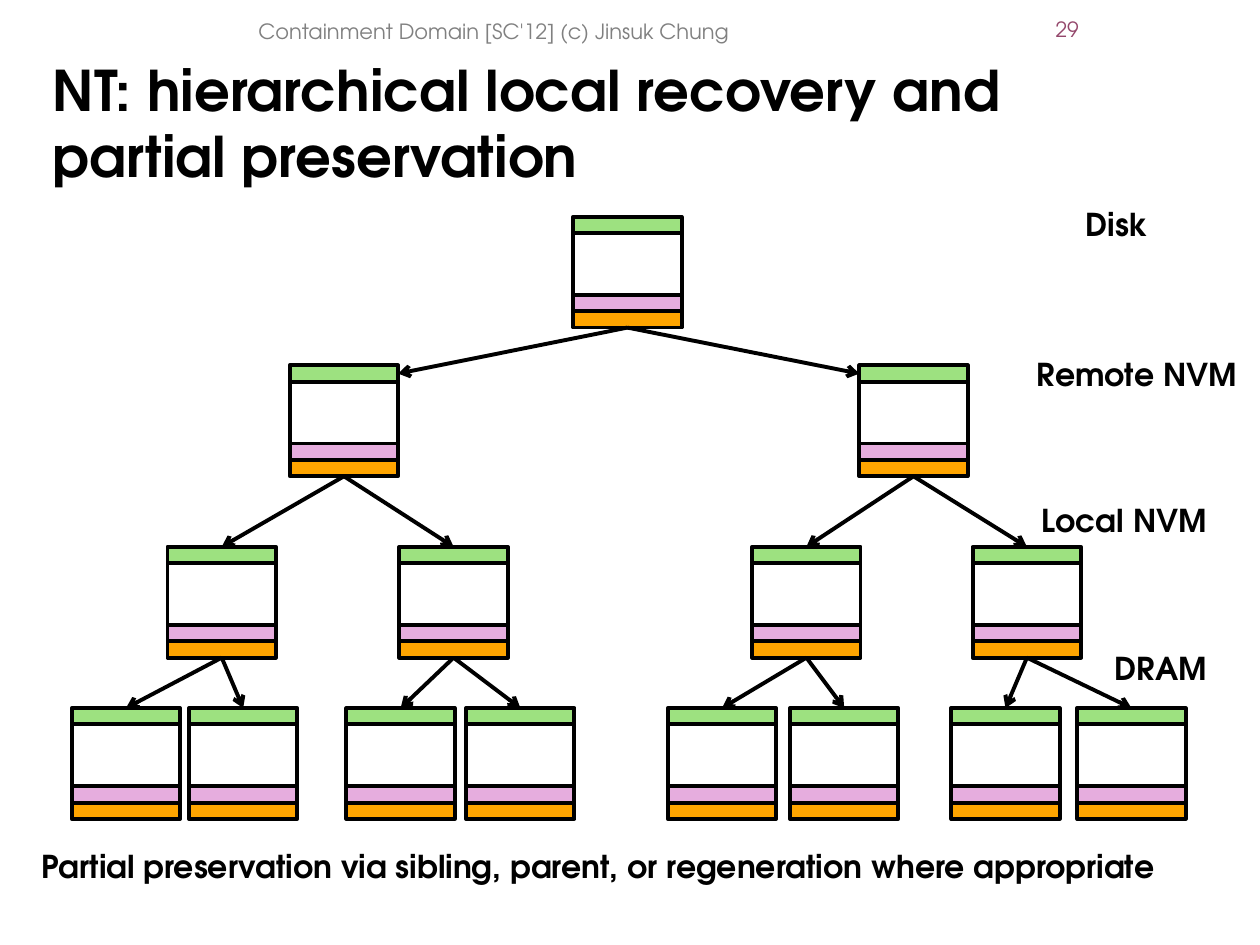
from typing import NamedTuple

from lxml import etree
from pptx import Presentation
from pptx import util as u
from pptx.dml.color import RGBColor
from pptx.enum import shapes, text
from pptx.oxml.ns import qn

FONT = "TeX Gyre Adventor"
HUES = {"ink": "000000", "green": "9DE180", "pink": "E6ADDE",
        "orange": "FFA500", "grey": "808080", "plum": "94476B"}
WIDE, BODY, BAND = 0.86, 0.49, 0.13
TOP, LEFT, BOTTOM, RIGHT = range(4)


class Level(NamedTuple):
    top: float
    lefts: list[float]


class Label(NamedTuple):
    words: str
    left: float
    top: float
    wide: float


class Node(NamedTuple):
    head: object
    foot: object


LEVELS = [
    Level(1.72, [4.55]),
    Level(2.9, [2.3, 6.82]),
    Level(4.34, [1.33, 3.17, 5.97, 7.72]),
    Level(5.62, [0.57, 1.5, 2.75, 3.7, 5.3, 6.27, 7.55, 8.55]),
]
LABELS = [
    Label("Disk", 8.52, 1.58, 0.83),
    Label("Remote NVM", 8.13, 2.77, 1.99),
    Label("Local NVM", 8.17, 3.93, 1.99),
    Label("DRAM", 8.75, 5.1, 1.41),
    Label("Partial preservation via sibling, parent, or regeneration"
          " where appropriate", 0.23, 6.67, 9.22),
]


def color(name: str) -> RGBColor:
    return RGBColor.from_string(HUES[name])


def write(slide, words: str, left: float, top: float, wide: float, high: float,
          *, size: float = 18, hue: str = "ink", bold: bool = False,
          align=text.PP_ALIGN.LEFT, anchor=text.MSO_ANCHOR.TOP,
          inset: tuple = (0.1, 0.05), space: float = 1.0, grow: bool = False):
    box = slide.shapes.add_textbox(*map(u.Inches, (left, top, wide, high)))
    frame = box.text_frame
    frame.word_wrap = True
    frame.vertical_anchor = anchor
    frame.margin_left = frame.margin_right = u.Inches(inset[0])
    frame.margin_top = frame.margin_bottom = u.Inches(inset[1])
    if grow:
        frame.auto_size = text.MSO_AUTO_SIZE.SHAPE_TO_FIT_TEXT
    para = frame.paragraphs[0]
    para.text = words
    para.alignment = align
    para.line_spacing = space
    for run in para.runs:
        run.font.name = FONT
        run.font.size = u.Pt(size)
        run.font.bold = bold
        run.font.color.rgb = color(hue)


def bar(group, left: float, top: float, high: float, hue: str | None = None):
    rect = group.shapes.add_shape(shapes.MSO_SHAPE.RECTANGLE,
                                  *map(u.Inches, (left, top, WIDE, high)))
    rect.shadow.inherit = False
    if hue:
        rect.fill.solid()
        rect.fill.fore_color.rgb = color(hue)
    else:
        rect.fill.background()
    rect.line.color.rgb = color("ink")
    rect.line.width = u.Pt(2.25)
    return rect


def domain(slide, left: float, top: float) -> Node:
    """Draw one containment domain: an open body between coloured bands."""
    group = slide.shapes.add_group_shape()
    base = top + BAND + BODY
    bar(group, left, top + BAND, BODY)
    head = bar(group, left, top, BAND, "green")
    bar(group, left, base, BAND, "pink")
    foot = bar(group, left, base + BAND, BAND, "orange")
    return Node(head, foot)


def arrow(slide, start: Node, end: Node, side: int):
    line = slide.shapes.add_connector(shapes.MSO_CONNECTOR.STRAIGHT, 0, 0, 0, 0)
    line.begin_connect(start.foot, BOTTOM)
    line.end_connect(end.head, side)
    line.line.color.rgb = color("ink")
    line.line.width = u.Pt(2.25)
    etree.SubElement(line.line._get_or_add_ln(), qn("a:tailEnd"), type="arrow")
    etree.SubElement(line._element.spPr, qn("a:effectLst"))


def main():
    deck = Presentation()
    deck.slide_width, deck.slide_height = u.Inches(10), u.Inches(7.5)
    slide = deck.slides.add_slide(deck.slide_layouts[6])
    mid = text.MSO_ANCHOR.MIDDLE

    write(slide, "NT: hierarchical local recovery and\vpartial preservation",
          0.42, 0.5, 9.41, 0.98, size=32, bold=True, anchor=mid,
          inset=(0, 0), space=0.99)
    write(slide, "29", 7.75, -0.02, 0.91, 0.5, size=12, hue="plum",
          align=text.PP_ALIGN.RIGHT, anchor=mid)
    write(slide, "Containment Domain [SC'12] (c) Jinsuk Chung",
          0.92, 0, 6, 0.5, size=12, hue="grey",
          align=text.PP_ALIGN.CENTER, anchor=mid)

    tree = [[domain(slide, left, level.top) for left in level.lefts]
            for level in LEVELS]
    for depth, (above, below) in enumerate(zip(tree, tree[1:])):
        for i, child in enumerate(below):
            # The root reaches its children from the inner sides.
            side = (RIGHT, LEFT)[i] if depth == 0 else TOP
            arrow(slide, above[i // 2], child, side)

    for label in LABELS:
        write(slide, label.words, label.left, label.top, label.wide, 0.4,
              bold=True, grow=True)
    deck.save("out.pptx")


if __name__ == "__main__":
    main()
